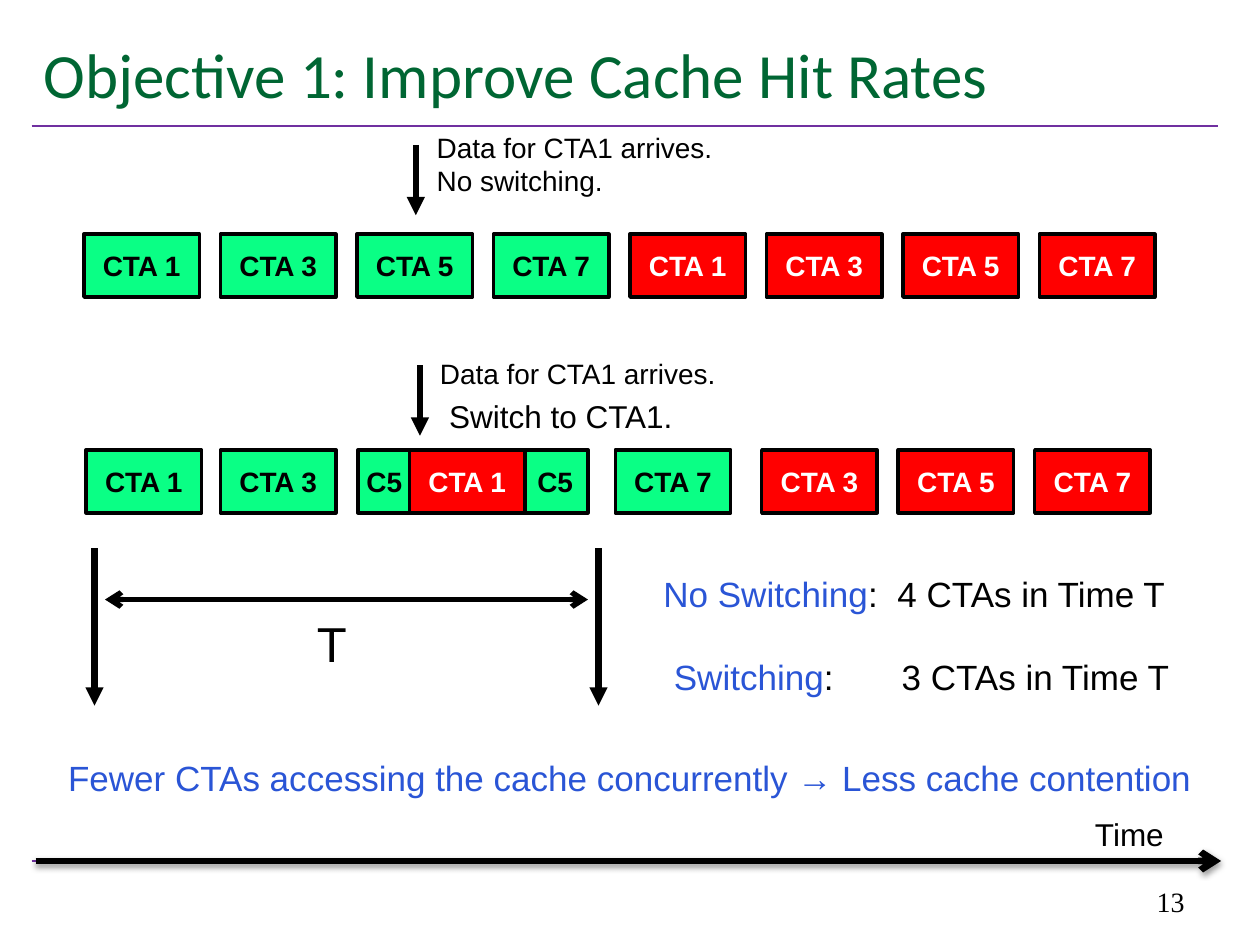
from dataclasses import dataclass

from lxml.etree import SubElement
from pptx import Presentation
from pptx.dml.color import RGBColor
from pptx.enum.shapes import MSO_CONNECTOR, MSO_SHAPE
from pptx.enum.text import MSO_ANCHOR, PP_ALIGN
from pptx.oxml.ns import qn
from pptx.util import Inches, Pt

COLS, ROWS = 120, 90
CELL = Inches(10) / COLS
INSET = 1.2


@dataclass(frozen=True)
class Theme:
    body: str = "Arial"
    heading: str = "Calibri"
    numeral: str = "Times New Roman"
    black: str = "000000"
    white: str = "FFFFFF"
    title: str = "006633"
    rule: str = "7030A0"
    accent: str = "2A55D6"
    green: str = "0AFF85"
    red: str = "FF0000"
    title_size: int = 36
    span_size: int = 28
    point_size: int = 20
    label_size: int = 18
    small_size: int = 16


T = Theme()


def grid(*cells):
    return [round(c * CELL) for c in cells]


def rgb(color):
    return RGBColor.from_string(color)


def write(sp, text, size=T.small_size, font=T.body, color=T.black, bold=False,
          align=PP_ALIGN.LEFT, anchor=MSO_ANCHOR.TOP, inset=INSET, wrap=True, tab=None):
    tf = sp.text_frame
    tf.word_wrap = wrap
    tf.vertical_anchor = anchor
    tf.margin_left, tf.margin_right = grid(inset, inset)
    tf.margin_top, tf.margin_bottom = grid(inset / 2, inset / 2)
    for i, line in enumerate(text if isinstance(text, list) else [text]):
        p = tf.paragraphs[0] if i == 0 else tf.add_paragraph()
        p.alignment = align
        if tab:
            tabs = SubElement(p._p.get_or_add_pPr(), qn("a:tabLst"))
            SubElement(tabs, qn("a:tab"), pos=str(grid(tab)[0]), algn="l")
        for content, run_color in line if isinstance(line, list) else [(line, color)]:
            r = p.add_run()
            r.text = content
            r.font.size, r.font.name, r.font.bold = Pt(size), font, bold
            r.font.color.rgb = rgb(run_color)


def add_text(s, box, text, **style):
    write(s.shapes.add_textbox(*grid(*box)), text, **style)


def add_block(s, x, y, label, fill, width=11, align=PP_ALIGN.CENTER, inset=INSET):
    sp = s.shapes.add_shape(MSO_SHAPE.RECTANGLE, *grid(x, y, width, 6))
    sp.shadow.inherit = False
    sp.fill.solid()
    sp.fill.fore_color.rgb = rgb(fill)
    sp.line.color.rgb = rgb(T.black)
    sp.line.width = Pt(2)
    write(sp, label, color=T.white if fill == T.red else T.black, bold=True,
          align=align, anchor=MSO_ANCHOR.MIDDLE, inset=inset)


def add_line(s, x1, y1, x2, y2, width=3.5, color=T.black, head=None, tail=None, shadow=False):
    cx = s.shapes.add_connector(MSO_CONNECTOR.STRAIGHT, *grid(x1, y1, x2, y2))
    cx.line.color.rgb = rgb(color)
    cx.line.width = Pt(width)
    ln = cx.line._get_or_add_ln()
    for tag, kind in (("a:headEnd", head), ("a:tailEnd", tail)):
        if kind:
            SubElement(ln, qn(tag), type=kind)
    effects = SubElement(cx._element.spPr, qn("a:effectLst"))
    if shadow:
        outer = SubElement(effects, qn("a:outerShdw"), blurRad=str(Pt(3.1)),
                           dist=str(Pt(1.6)), dir="5400000", rotWithShape="0")
        clr = SubElement(outer, qn("a:srgbClr"), val=T.black)
        SubElement(clr, qn("a:alpha"), val="38000")


def add_frame(s):
    for y in (12, 82):
        add_line(s, 3, y, 116, y, width=1.5, color=T.rule)
    add_text(s, (3, 2, 114, 10), "Objective 1: Improve Cache Hit Rates", size=T.title_size,
             font=T.heading, color=T.title, anchor=MSO_ANCHOR.MIDDLE)
    add_text(s, (86, 82, 28, 6), "13", font=T.numeral, align=PP_ALIGN.RIGHT,
             anchor=MSO_ANCHOR.BOTTOM)


def add_no_switching(s):
    for i in range(8):
        add_block(s, 8 + 13 * i, 22.3, f"CTA {2 * (i % 4) + 1}", T.green if i < 4 else T.red)
    add_text(s, (41.6, 12.4, 34.3, 6.5), ["Data for CTA1 arrives.", "No switching."], inset=0)
    add_line(s, 39.6, 13.8, 39.6, 20.5, tail="triangle")


def add_switching(s):
    y = 42.85
    for x, n in ((8.2, 1), (21, 3), (58.6, 7)):
        add_block(s, x, y, f"CTA {n}", T.green)
    for i, n in enumerate((3, 5, 7)):
        add_block(s, 72.55 + 13 * i, y, f"CTA {n}", T.red)
    add_block(s, 34.1, y, "C5", T.green, width=5, inset=0)
    add_block(s, 39, y, "CTA 1", T.red)
    add_block(s, 50, y, "C5", T.green, width=6, align=PP_ALIGN.LEFT)
    add_line(s, 40, 34.8, 40, 41.5, tail="triangle")
    add_text(s, (41.9, 34, 41, 3.2), "Data for CTA1 arrives.", inset=0)
    add_text(s, (41.6, 37.2, 24, 4.8), "Switch to CTA1.", size=T.label_size, wrap=False)


def add_comparison(s):
    for x in (9, 57):
        add_line(s, x, 52.2, x, 67.2, tail="triangle")
    add_line(s, 10, 57.1, 56, 57.1, width=3, head="arrow", tail="arrow")
    add_text(s, (29, 57.8, 14, 6.8), "T", size=T.span_size)
    for x, y, case, count, tab in ((62, 53.9, "No Switching", 4, 22.3),
                                   (63, 61.8, "Switching", 3, 21.7)):
        add_text(s, (x, y, 54, 5.3), [[(case, T.accent), (f":\t{count} CTAs in Time T", T.black)]],
                 size=T.point_size, tab=tab)
    add_text(s, (5.3, 71.5, 115, 5.3),
             "Fewer CTAs accessing the cache concurrently → Less cache contention",
             size=T.point_size, color=T.accent)


def add_time_axis(s):
    add_line(s, 3.4, 82, 116.3, 82, width=3.75, tail="arrow", shadow=True)
    add_text(s, (103.1, 77, 16, 4.8), "Time", size=T.label_size)


def main():
    prs = Presentation()
    prs.slide_width, prs.slide_height = grid(COLS, ROWS)
    s = prs.slides.add_slide(prs.slide_layouts[6])
    add_frame(s)
    add_no_switching(s)
    add_switching(s)
    add_comparison(s)
    add_time_axis(s)
    prs.save("out.pptx")


if __name__ == "__main__":
    main()
